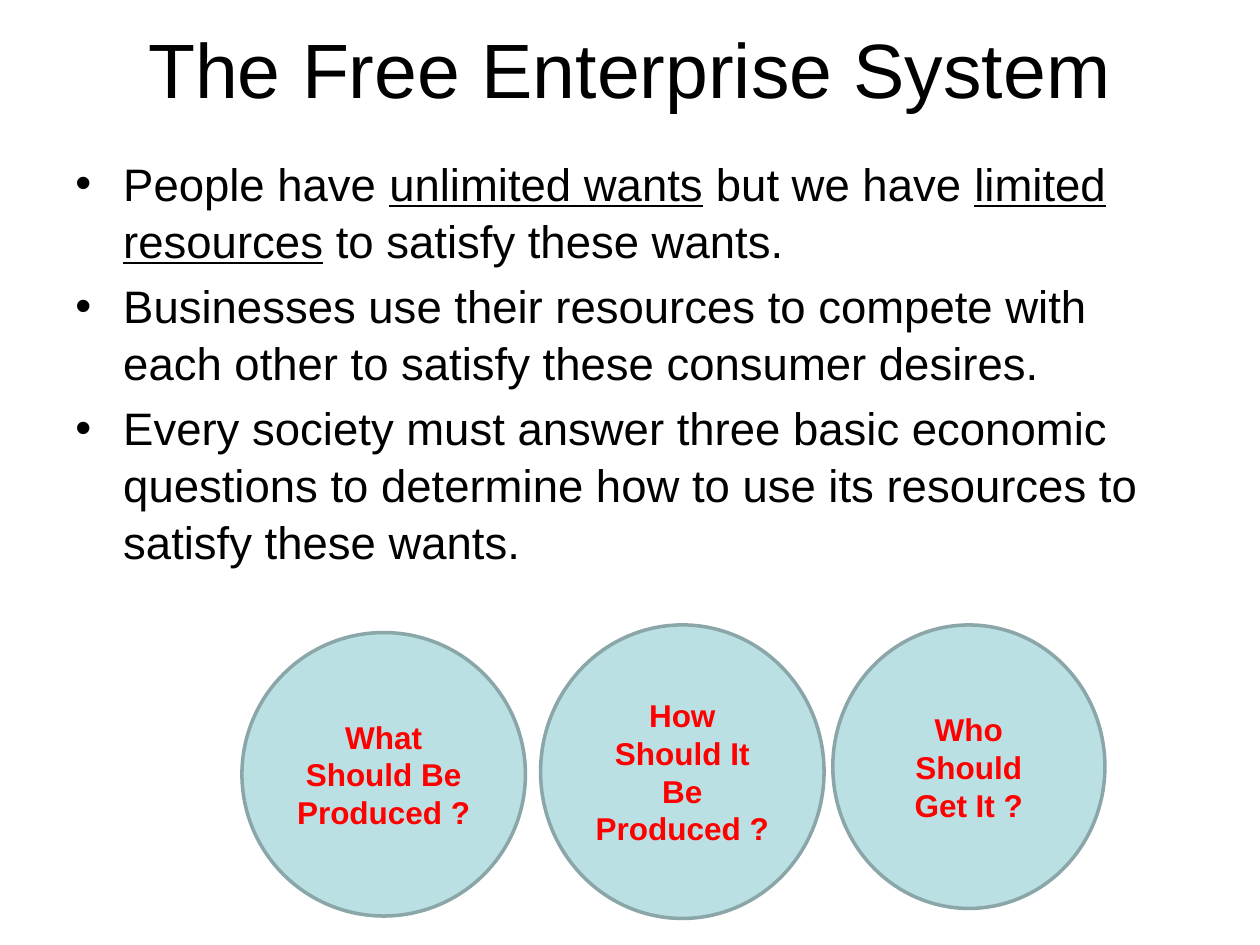
from dataclasses import dataclass

from lxml import etree
from pptx import Presentation, util as u
from pptx.dml.color import RGBColor
from pptx.enum import shapes, text
from pptx.oxml import ns


@dataclass(frozen=True)
class Theme:
    font: str = "Arial"
    ink: str = "000000"
    accent: str = "FF0000"
    fill: str = "BBE0E3"
    outline: str = "8AA6A8"
    title_size: float = 44
    body_size: float = 26
    circle_size: float = 18


def add_text(paragraph, content, *, font, size, color, bold=False, underline=False):
    run = paragraph.add_run()
    run.text = content
    run.font.name = font
    run.font.size = u.Pt(size)
    run.font.color.rgb = RGBColor.from_string(color)
    run.font.bold = bold
    run.font.underline = underline


def add_bullet(paragraph, indent):
    """Give the paragraph a round bullet with a hanging indent."""
    properties = paragraph._p.get_or_add_pPr()
    properties.set("marL", str(u.Inches(indent)))
    properties.set("indent", str(-u.Inches(indent)))
    etree.SubElement(properties, ns.qn("a:buFont")).set("typeface", "Arial")
    etree.SubElement(properties, ns.qn("a:buChar")).set("char", "•")


class SlideBuilder:
    """Places elements by shares of the slide's width and height."""

    def __init__(self, presentation, theme):
        self.theme = theme
        self.width = presentation.slide_width
        self.height = presentation.slide_height
        self.slide = presentation.slides.add_slide(presentation.slide_layouts[6])

    def box(self, left, top, width, height):
        return (round(left * self.width), round(top * self.height),
                round(width * self.width), round(height * self.height))

    def text_frame(self, area, anchor):
        frame = self.slide.shapes.add_textbox(*self.box(*area)).text_frame
        frame.word_wrap = True
        frame.vertical_anchor = anchor
        return frame

    def title(self, content, area):
        paragraph = self.text_frame(area, text.MSO_ANCHOR.MIDDLE).paragraphs[0]
        paragraph.alignment = text.PP_ALIGN.CENTER
        add_text(paragraph, content, font=self.theme.font,
                 size=self.theme.title_size, color=self.theme.ink)

    def bullets(self, items, area):
        """Each item is a list of pieces; every second piece is underlined."""
        frame = self.text_frame(area, text.MSO_ANCHOR.TOP)
        for index, pieces in enumerate(items):
            paragraph = frame.add_paragraph() if index else frame.paragraphs[0]
            add_bullet(paragraph, 0.38)
            paragraph.line_spacing = 1.04
            paragraph.space_before = u.Pt(5 if index else 0)
            for position, piece in enumerate(pieces):
                add_text(paragraph, piece, font=self.theme.font,
                         size=self.theme.body_size, color=self.theme.ink,
                         underline=position % 2 == 1)

    def circle(self, content, area):
        shape = self.slide.shapes.add_shape(shapes.MSO_SHAPE.OVAL, *self.box(*area))
        shape.shadow.inherit = False
        shape.fill.solid()
        shape.fill.fore_color.rgb = RGBColor.from_string(self.theme.fill)
        shape.line.color.rgb = RGBColor.from_string(self.theme.outline)
        shape.line.width = u.Pt(2)
        frame = shape.text_frame
        frame.word_wrap = True
        frame.vertical_anchor = text.MSO_ANCHOR.MIDDLE
        paragraph = frame.paragraphs[0]
        paragraph.alignment = text.PP_ALIGN.CENTER
        add_text(paragraph, content, font=self.theme.font,
                 size=self.theme.circle_size, color=self.theme.accent, bold=True)


BULLETS = [
    ["People have ", "unlimited wants", " but we have ", "limited resources",
     " to satisfy these wants."],
    ["Businesses use their resources to compete with each other to satisfy "
     "these consumer desires."],
    ["Every society must answer three basic economic questions to determine "
     "how to use its resources to satisfy these wants."],
]
# Left, top, width and height as inches over the slide's 10 by 7.5 inches.
QUESTIONS = [
    ("What Should Be Produced ?", (1.92 / 10, 5.02 / 7.5, 2.25 / 10, 2.25 / 7.5)),
    ("How Should It Be Produced ?", (4.29 / 10, 4.96 / 7.5, 2.25 / 10, 2.33 / 7.5)),
    ("Who Should Get It ?", (6.61 / 10, 4.96 / 7.5, 2.16 / 10, 2.25 / 7.5)),
]


def main():
    presentation = Presentation()
    presentation.slide_width = u.Inches(10)
    presentation.slide_height = u.Inches(7.5)
    builder = SlideBuilder(presentation, Theme())
    builder.title("The Free Enterprise System", (0.05, 0, 0.9, 1.08 / 7.5))
    builder.bullets(BULLETS, (0.05, 1.17 / 7.5, 0.9, 3.79 / 7.5))
    for question, area in QUESTIONS:
        builder.circle(question, area)
    presentation.save("out.pptx")


if __name__ == "__main__":
    main()
